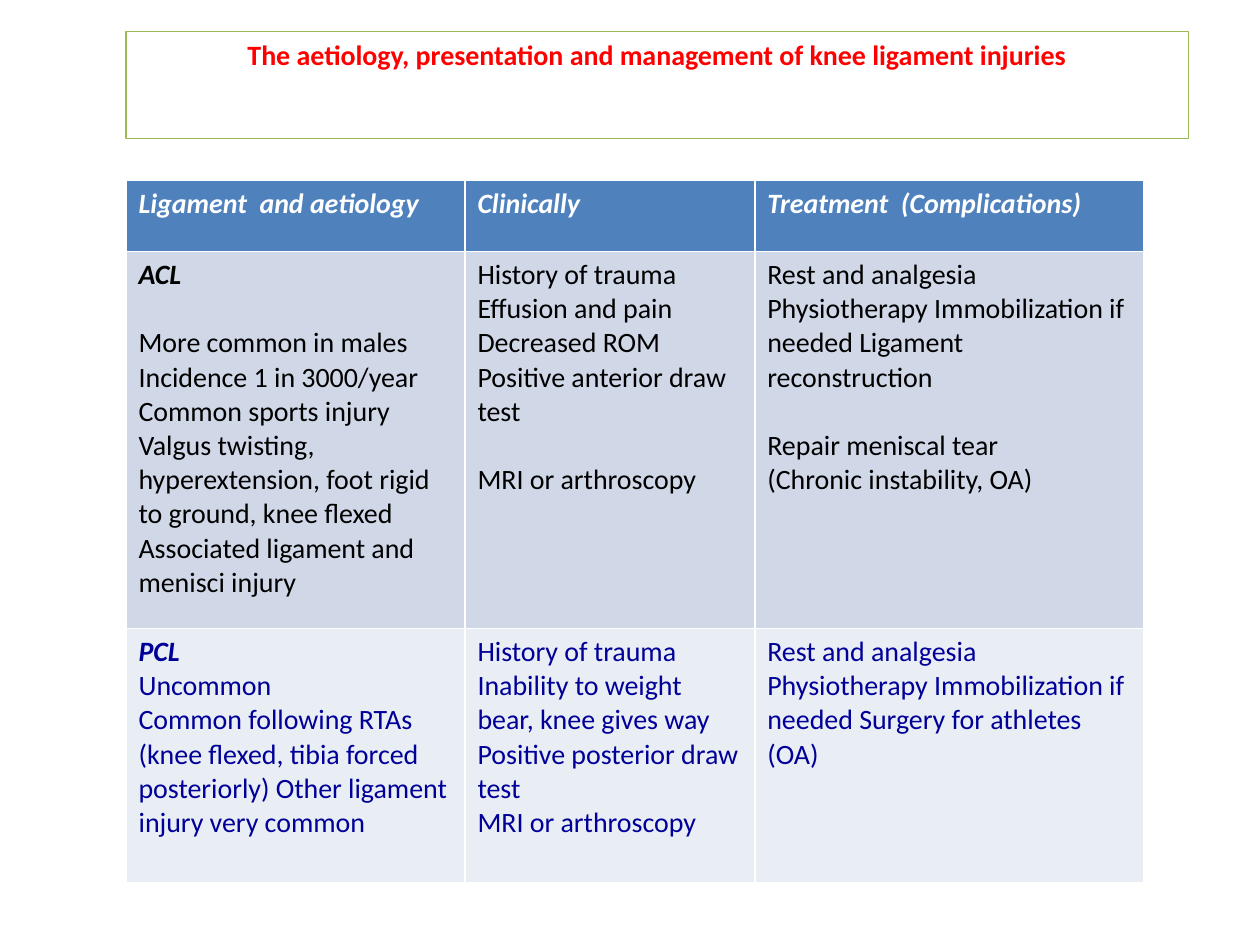
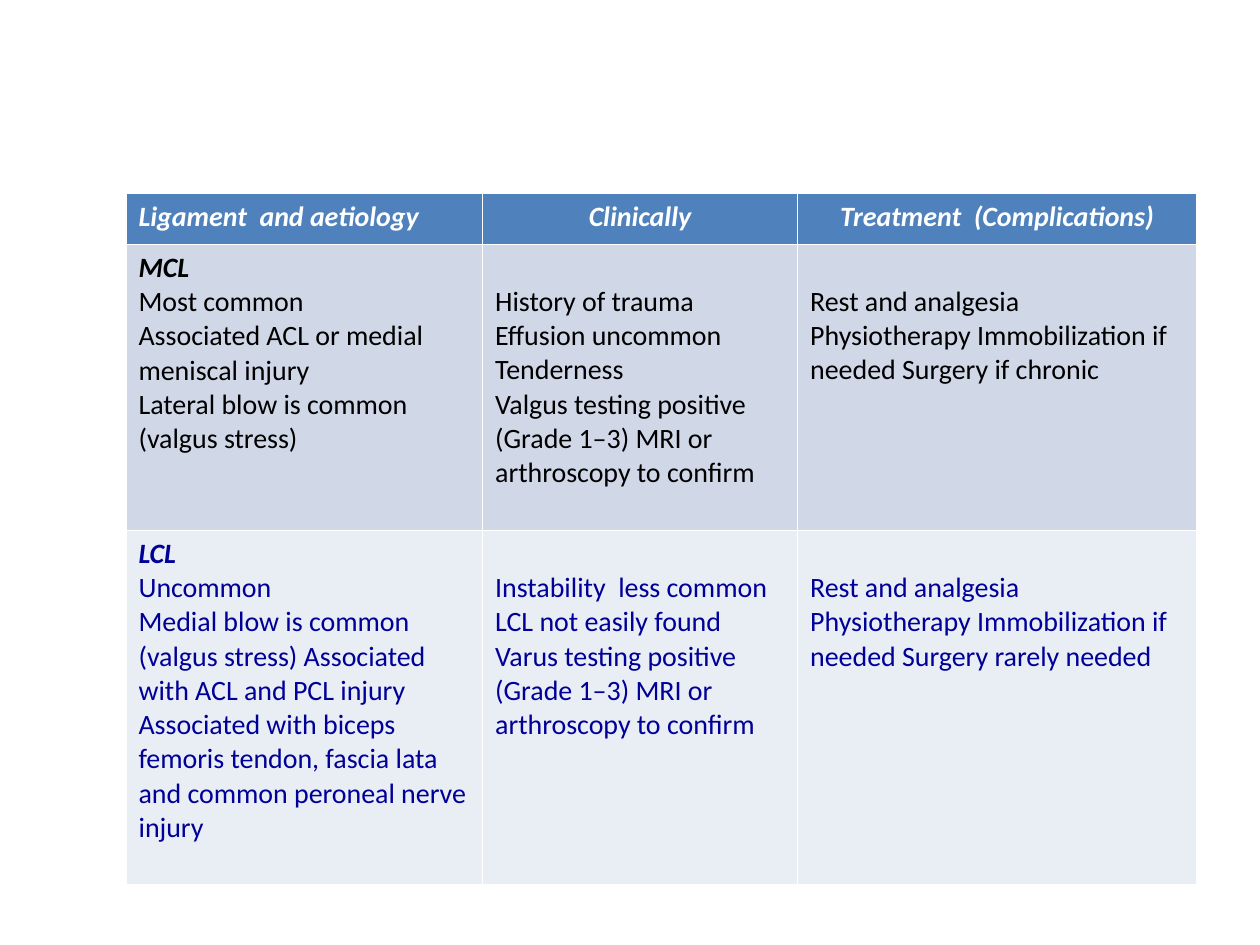
import pptx
import pptx.dml.color
import pptx.enum.shapes
import pptx.enum.text
import pptx.oxml
import pptx.oxml.ns
import pptx.util

Pt = pptx.util.Pt
ALIGN = pptx.enum.text.PP_ALIGN

COLORS = {
    "title": "FF0000", "title_line": "9BBB59", "white": "FFFFFF",
    "header": "4F81BD", "odd": "D0D8E8", "even": "E9EDF4",
    "odd_text": "000000", "even_text": "000099",
}
FONT, SIZE, LINE = "Calibri", 16, 19.5
LEFT = 72
MARGIN = 3.6
GAP = None  # one empty line above the next paragraph
HEADINGS = ["Ligament  and aetiology", "Clinically", "Treatment  (Complications)"]

CRUCIATES = [
    [["ACL", GAP,
      "More common in males Incidence 1 in 3000/year Common sports injury",
      "Valgus twisting, hyperextension, foot rigid to ground, knee flexed",
      "Associated ligament and menisci injury"],
     ["History of trauma Effusion and pain Decreased ROM",
      "Positive anterior draw test", GAP,
      "MRI or arthroscopy"],
     ["Rest and analgesia Physiotherapy Immobilization if needed Ligament reconstruction", GAP,
      "Repair meniscal tear",
      "(Chronic instability, OA)"]],
    [["PCL", "Uncommon",
      "Common following RTAs (knee flexed, tibia forced posteriorly) "
      "Other ligament injury very common"],
     ["History of trauma",
      "Inability to weight bear, knee gives way",
      "Positive posterior draw test",
      "MRI or arthroscopy"],
     ["Rest and analgesia Physiotherapy Immobilization if needed Surgery for athletes",
      "(OA)"]],
]
COLLATERALS = [
    [["MCL", "Most common",
      "Associated ACL or medial meniscal injury",
      "Lateral blow is common (valgus stress)"],
     [GAP, "History of trauma Effusion uncommon Tenderness",
      "Valgus testing positive (Grade 1–3) MRI or arthroscopy to confirm"],
     [GAP, "Rest and analgesia Physiotherapy Immobilization if needed Surgery if chronic"]],
    [["LCL", "Uncommon",
      "Medial blow is common (valgus stress) Associated with ACL and PCL injury",
      "Associated with biceps femoris tendon, fascia lata and common peroneal nerve injury"],
     [GAP, "Instability  less common",
      "LCL not easily found",
      "Varus testing positive (Grade 1–3) MRI or arthroscopy to confirm"],
     [GAP, "Rest and analgesia Physiotherapy Immobilization if needed Surgery rarely needed"]],
]


def rgb(name):
    return pptx.dml.color.RGBColor.from_string(COLORS[name])


def add_run(p, text, color, **style):
    r = p.add_run()
    r.text = text
    r.font.color.rgb = rgb(color)
    for key, value in {"name": FONT, "size": Pt(SIZE), **style}.items():
        setattr(r.font, key, value)


def add_title(s, text, left, top, width, height):
    sp = s.shapes.add_shape(pptx.enum.shapes.MSO_SHAPE.RECTANGLE,
                            Pt(left), Pt(top), Pt(width), Pt(height))
    sp.shadow.inherit = False
    sp.fill.background()
    sp.line.color.rgb = rgb("title_line")
    sp.line.width = Pt(0.75)
    tf = sp.text_frame
    tf.word_wrap = True
    tf.vertical_anchor = pptx.enum.text.MSO_ANCHOR.TOP
    p = tf.paragraphs[0]
    p.alignment = ALIGN.CENTER
    add_run(p, text, "title", bold=True)


def add_borders(cell):
    tc_pr = cell._tc.get_or_add_tcPr()
    for side in "LRTB":
        tc_pr.append(pptx.oxml.parse_xml(
            f'<a:ln{side} {pptx.oxml.ns.nsdecls("a")} w="{Pt(1)}"><a:solidFill>'
            f'<a:srgbClr val="{COLORS["white"]}"/></a:solidFill></a:ln{side}>'))


def fill_cell(cell, paragraphs, fill, color, bold_first, align=ALIGN.LEFT):
    """Write the paragraphs; a GAP at the top widens the cell's top margin."""
    add_borders(cell)
    cell.fill.solid()
    cell.fill.fore_color.rgb = rgb(fill)
    starts_low = paragraphs[0] is GAP
    cell.margin_top = Pt(MARGIN + LINE * starts_low)
    tf = cell.text_frame
    texts = paragraphs[starts_low:]
    for i, text in enumerate(texts):
        if text is GAP:
            continue
        p = tf.add_paragraph() if i else tf.paragraphs[0]
        p.alignment = align
        if i and texts[i - 1] is GAP:
            p.space_before = Pt(LINE)
        strong = bold_first and i == 0
        add_run(p, text, color, bold=strong, italic=strong)


def add_ligament_table(s, ligaments, left, top, widths, heights, heading_align):
    """Headings over one row for each ligament, in alternating colours."""
    table = s.shapes.add_table(len(heights), len(widths), Pt(left), Pt(top),
                               Pt(sum(widths)), Pt(sum(heights))).table
    table.horz_banding = False
    for column, width in zip(table.columns, widths):
        column.width = Pt(width)
    for row, height in zip(table.rows, heights):
        row.height = Pt(height)
    for c, heading in enumerate(HEADINGS):
        align = heading_align if c else ALIGN.LEFT
        fill_cell(table.cell(0, c), [heading], "header", "white", True, align)
    for r, (ligament, band) in enumerate(zip(ligaments, ("odd", "even")), 1):
        for c, paragraphs in enumerate(ligament):
            fill_cell(table.cell(r, c), paragraphs, band, f"{band}_text", c == 0)


def main():
    prs = pptx.Presentation()
    prs.slide_width, prs.slide_height = Pt(720), Pt(540)
    blank = prs.slide_layouts[6]

    s = prs.slides.add_slide(blank)
    add_title(s, "The aetiology, presentation and management of knee ligament injuries",
              LEFT, 18, 607, 61)
    add_ligament_table(s, CRUCIATES, LEFT, 103, (193.7, 165.6, 222.5),
                       (40.7, 215.4, 145.2), ALIGN.LEFT)

    s = prs.slides.add_slide(blank)
    add_ligament_table(s, COLLATERALS, LEFT, 110.5, (203.8, 180, 228.2),
                       (29.2, 163.5, 202.4), ALIGN.CENTER)
    prs.save("out.pptx")


if __name__ == "__main__":
    main()
